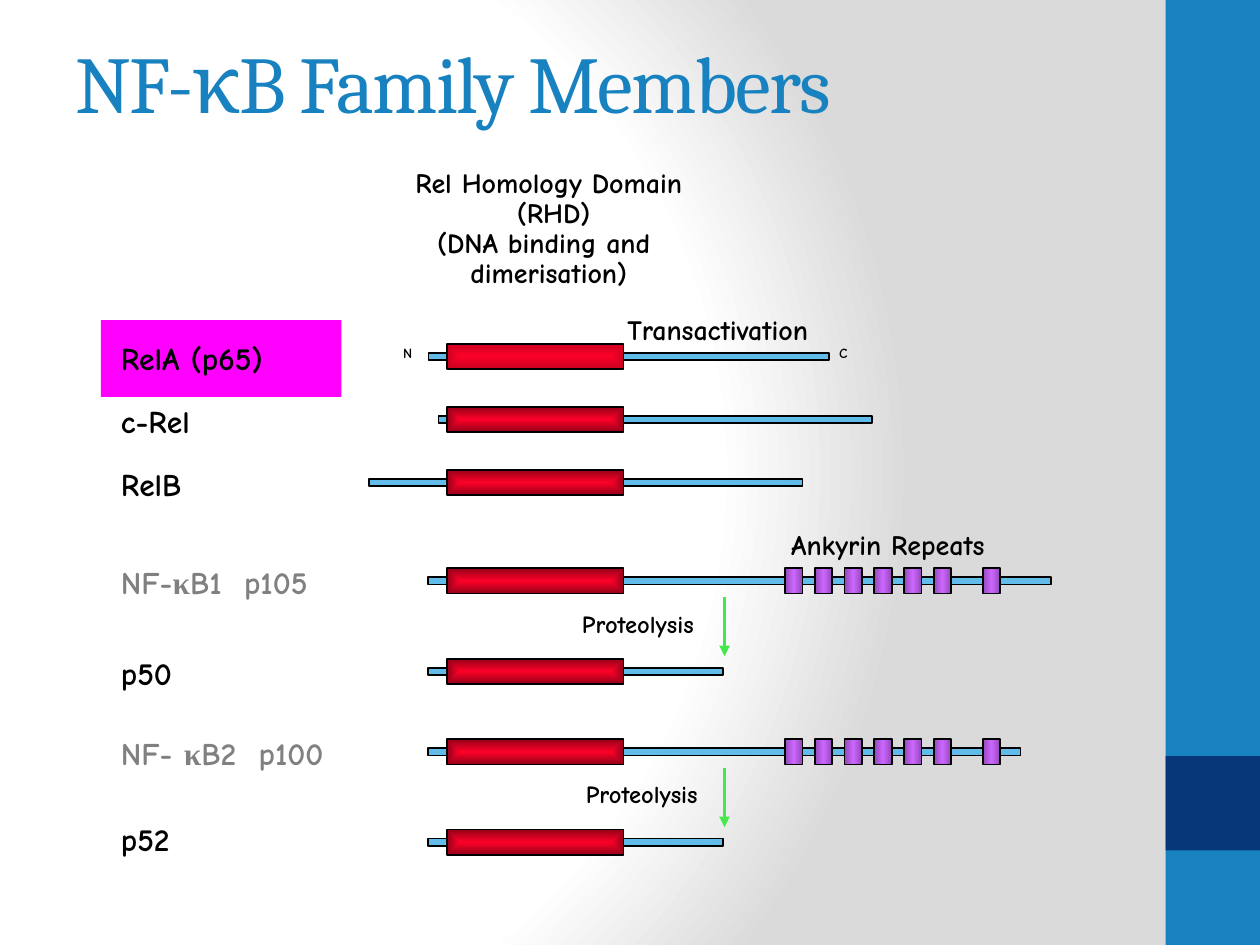
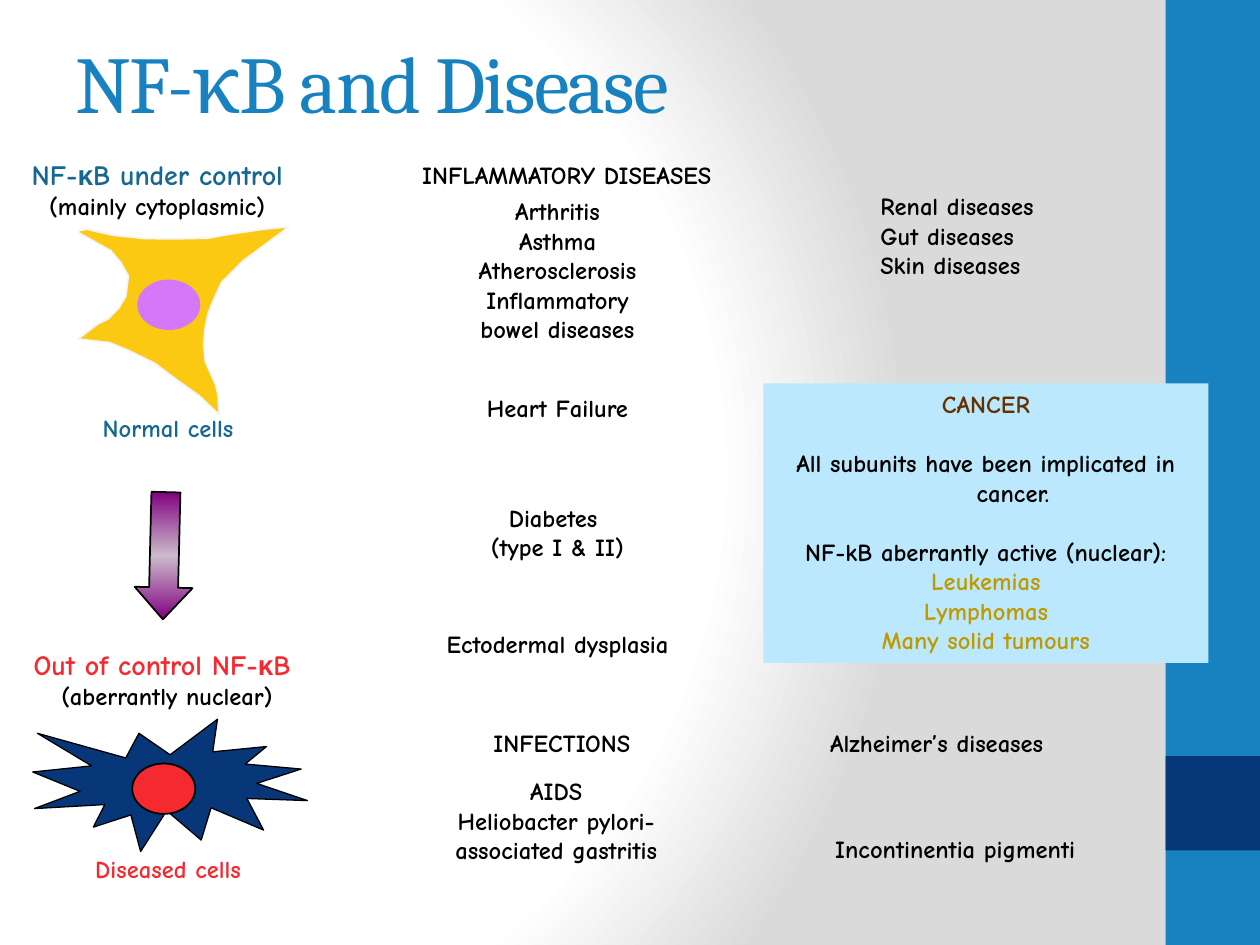
from copy import deepcopy

from pptx import Presentation
from pptx.dml.color import RGBColor
from pptx.enum.shapes import MSO_CONNECTOR, MSO_SHAPE
from pptx.enum.text import MSO_ANCHOR, MSO_AUTO_SIZE, PP_ALIGN
from pptx.oxml import parse_xml
from pptx.oxml.ns import nsdecls, qn
from pptx.oxml.xmlchemy import OxmlElement
from pptx.util import Pt

RECT, OVAL = MSO_SHAPE.RECTANGLE, MSO_SHAPE.OVAL
BURST, ARROW = MSO_SHAPE.EXPLOSION1, MSO_SHAPE.RIGHT_ARROW
STRAIGHT = MSO_CONNECTOR.STRAIGHT
LEFT, CENTER = PP_ALIGN.LEFT, PP_ALIGN.CENTER
TOP, MIDDLE = MSO_ANCHOR.TOP, MSO_ANCHOR.MIDDLE
GROW, FIXED = MSO_AUTO_SIZE.SHAPE_TO_FIT_TEXT, MSO_AUTO_SIZE.NONE

BLACK = RGBColor(0x00, 0x00, 0x00)
GREY = RGBColor(0x80, 0x80, 0x80)
BLUE = RGBColor(0x17, 0x82, 0xBF)
NAVY = RGBColor(0x07, 0x37, 0x79)
TEAL = RGBColor(0x14, 0x68, 0x91)
SKY = RGBColor(0x62, 0xBC, 0xE9)
PALE_BLUE = RGBColor(0xBC, 0xE8, 0xFD)
MAGENTA = RGBColor(0xFF, 0x00, 0xFF)
LILAC = RGBColor(0xD6, 0x77, 0xFA)
GREEN = RGBColor(0x43, 0xE9, 0x4B)
RED = RGBColor(0xF4, 0x2A, 0x30)
YELLOW = RGBColor(0xFB, 0xC9, 0x12)
OFF_WHITE = RGBColor(0xF4, 0xF4, 0xF4)
BROWN = RGBColor(0x64, 0x32, 0x01)
GOLD = RGBColor(0xBF, 0x99, 0x00)

TITLE_FONT, BODY_FONT = "Cambria", "Comic Neue"

CENTRED = '<a:path path="shape"><a:fillToRect l="50000" t="50000" r="50000" b="50000"/></a:path>'
GRADIENTS = {}
for name, stops, direction in [
    ("page", [(0, "FFFFFF"), (75, "FFFFFF"), (100, "DADADA")],
     '<a:path path="circle"><a:fillToRect l="20000" t="50000" r="100000" b="50000"/></a:path>'),
    ("bright domain", [(0, "FC0128"), (100, "CA0120")], CENTRED),
    ("domain", [(0, "FC0128"), (100, "950118")], CENTRED),
    ("repeat", [(0, "9249B6"), (50, "CC66FF"), (100, "9249B6")], '<a:lin ang="0" scaled="0"/>'),
    ("arrow", [(0, "800080"), (50, "CBBBCB"), (100, "800080")], '<a:lin ang="5400000" scaled="0"/>'),
]:
    gs = "".join(f'<a:gs pos="{pos * 1000}"><a:srgbClr val="{rgb}"/></a:gs>' for pos, rgb in stops)
    GRADIENTS[name] = parse_xml(f'<a:gradFill {nsdecls("a")} rotWithShape="0">'
                                f'<a:gsLst>{gs}</a:gsLst>{direction}</a:gradFill>')


def style(sp, fill, line=None, width=1):
    """Fill a shape with a colour or a named gradient, outline it and drop its shadow."""
    sp.shadow.inherit = False
    if isinstance(fill, str):
        sp.fill.background()
        spPr = sp._element.spPr
        spPr.replace(spPr.find(qn("a:noFill")), deepcopy(GRADIENTS[fill]))
    else:
        sp.fill.solid()
        sp.fill.fore_color.rgb = fill
    if line is None:
        sp.line.fill.background()
    else:
        sp.line.color.rgb = line
        sp.line.width = Pt(width)
    return sp


def add_text(sp, text, size=14, color=BLACK, bold=True, font=BODY_FONT, kappa="Arial",
             align=CENTER, wrap=False, fit=GROW, anchor=TOP, inset=(7.2, 3.6),
             spacing=None, before=0):
    """Append one paragraph per line; the letter κ may have its own font."""
    tf = sp.text_frame
    tf.word_wrap, tf.auto_size, tf.vertical_anchor = wrap, fit, anchor
    tf.margin_left = tf.margin_right = Pt(inset[0])
    tf.margin_top = tf.margin_bottom = Pt(inset[1])
    for line in text.split("\n"):
        p = tf.add_paragraph() if tf.text else tf.paragraphs[0]
        p.alignment, p.line_spacing, p.space_before = align, spacing, Pt(before)
        for part, face in zip(line.partition("κ"), (font, kappa, font)):
            if part:
                r = p.add_run()
                r.text = part
                r.font.name, r.font.size, r.font.bold = face, Pt(size), bold
                r.font.color.rgb = color


prs = Presentation()
prs.slide_width, prs.slide_height = Pt(720), Pt(540)

# Shared background, side bands and title
master = prs.slide_master
master.background.fill.background()
bgPr = master.element.find(".//" + qn("p:bgPr"))
bgPr.replace(bgPr.find(qn("a:noFill")), deepcopy(GRADIENTS["page"]))

slides = []
for title in ("NF-κB Family Members", "NF-κB and Disease"):
    s = prs.slides.add_slide(prs.slide_layouts[5])
    for top, height, color in ((0, 540, BLUE), (432, 54, NAVY)):
        style(s.shapes.add_shape(RECT, Pt(666), Pt(top), Pt(54), Pt(height)), color)
    sp = s.shapes.title
    sp.left, sp.top, sp.width, sp.height = Pt(36), Pt(1.5), Pt(600), Pt(90)
    add_text(sp, title, size=46, color=BLUE, bold=False, font=TITLE_FONT, kappa=TITLE_FONT,
             align=LEFT, wrap=True, fit=FIXED, anchor=MIDDLE)
    for r in sp.text_frame.paragraphs[0].runs:
        r._r.get_or_add_rPr().set("spc", "-100")
    slides.append(s)
family, disease = slides

# Slide 1: one row per protein, all domains aligned
s = family
style(s.shapes.add_shape(RECT, Pt(57.6), Pt(182.9), Pt(137.5), Pt(44)), MAGENTA)

DOMAIN_LEFT, DOMAIN_WIDTH, DOMAIN_HEIGHT, CHAIN_HEIGHT = 255.6, 100.8, 14.4, 4.2
REPEAT_LEFTS = [448.6 + 17 * i for i in range(6)] + [561.6]
proteins = [  # name, label top, row centre, chain left, chain width, has ankyrin repeats
    ("RelA (p65)", 193.7, 203.7, 244.8, 229, False),
    ("c-Rel", 229.7, 239.7, 250.6, 247.7, False),
    ("RelB", 265.7, 275.7, 211, 247.7, False),
    ("NF-κB1  p105", 321.8, 332, 244.8, 355.7, True),
    ("p50", 373.7, 383.7, 244.8, 168.5, False),
    ("NF- κB2  p100", 419.8, 429.7, 244.8, 338.4, True),
    ("p52", 468.7, 481.3, 244.8, 168.5, False),
]
labels = [  # text, left, top, width, height, size, colour, alignment
    ("Rel Homology Domain\n (RHD)\n(DNA binding and \ndimerisation)",
     162.7, 94.3, 301.7, 75, 16, BLACK, CENTER),
    ("Transactivation", 353.5, 178.6, 129.6, 22.3, 16, BLACK, LEFT),
    ("N", 225.4, 195.8, 23, 18.7, 8, BLACK, LEFT),
    ("C", 474.5, 195.8, 20.9, 18.7, 8, BLACK, LEFT),
    ("Ankyrin Repeats", 447.1, 301.7, 137.5, 22.3, 16, BLACK, LEFT),
    ("Proteolysis", 327.6, 347.8, 83.5, 20.9, 14, BLACK, LEFT),
    ("Proteolysis", 329.8, 445, 83.5, 20.9, 14, BLACK, LEFT),
]
label_widths = [103.7, 57.6, 49, 139, 42.5, 147.6, 42.5]

for (name, label_top, mid, left, width, has_repeats), label_width in zip(proteins, label_widths):
    labels.append((name, 64.1, label_top, label_width, 25.2, 18,
                   GREY if has_repeats else BLACK, LEFT))
    style(s.shapes.add_shape(RECT, Pt(left), Pt(mid - CHAIN_HEIGHT / 2), Pt(width),
                             Pt(CHAIN_HEIGHT)), SKY, BLACK)
    blocks = [(DOMAIN_LEFT, DOMAIN_WIDTH, "bright domain" if name.startswith("RelA") else "domain")]
    if has_repeats:
        blocks += [(x, 10, "repeat") for x in REPEAT_LEFTS]
        cn = s.shapes.add_connector(STRAIGHT, Pt(414), Pt(mid + 9.3), Pt(414), Pt(mid + 43))
        cn.line.color.rgb, cn.line.width = GREEN, Pt(2)
        tail = OxmlElement("a:tailEnd")
        tail.set("type", "triangle")
        cn.line._get_or_add_ln().append(tail)
        cn._element.spPr.append(OxmlElement("a:effectLst"))
    for x, block_width, fill in blocks:
        style(s.shapes.add_shape(RECT, Pt(x), Pt(mid - DOMAIN_HEIGHT / 2), Pt(block_width),
                                 Pt(DOMAIN_HEIGHT)), fill, BLACK)

for text, left, top, width, height, size, color, align in labels:
    sp = s.shapes.add_textbox(Pt(left), Pt(top), Pt(width), Pt(height))
    add_text(sp, text, size=size, color=color, align=align, kappa="Times New Roman",
             wrap=align == CENTER, inset=(5, 2.2), spacing=0.9)

# Slide 2: cells on the left, diseases on the right
s = disease
outline = [
    (45, 133), (63.4, 143.3), (69, 150), (73.4, 157.7), (72, 169.2), (68, 176), (61.9, 182.2),
    (56.2, 185), (44.6, 193.7), (62.6, 195.8), (73.4, 200.2), (88.6, 207.7), (101.5, 217.4),
    (113.8, 226.1), (125.3, 236.9), (124.6, 225.4), (123.1, 219.6), (117.4, 206.6),
    (116.4, 197), (117.2, 187.8), (119, 179), (122.4, 170.6), (126.7, 161.3), (139, 149),
    (155.5, 136.8), (161.3, 132.5), (164.9, 129.6), (150.5, 131), (131, 133.9), (118.8, 136.1),
    (100, 136.5), (82.9, 136.3), (65, 134.5), (49.7, 131), (45.4, 131.8),
]
points = [(Pt(x), Pt(y)) for x, y in outline]
builder = s.shapes.build_freeform(*points[0])
builder.add_line_segments(points[1:], close=True)
style(builder.convert_to_shape(), YELLOW, OFF_WHITE)
style(s.shapes.add_shape(OVAL, Pt(78.5), Pt(159.8), Pt(36), Pt(28.8)), LILAC)
style(s.shapes.add_shape(BURST, Pt(18.7), Pt(411), Pt(157), Pt(75.6)), NAVY, BLACK, 0.75)
style(s.shapes.add_shape(OVAL, Pt(75.6), Pt(436.3), Pt(36), Pt(28.8)), RED, BLACK)
arrow = style(s.shapes.add_shape(ARROW, Pt(57.6), Pt(301), Pt(72.7), Pt(33.1)), "arrow", BLACK)
arrow.rotation = 91.4
arrow.adjustments[0], arrow.adjustments[1] = 0.5, 0.55

for heading, note, left, top, width, color in [
    ("NF-κB under control", "(mainly cytoplasmic)", 1.4, 86.4, 177.1, TEAL),
    ("Out of control NF-κB ", "(aberrantly nuclear)", -1.4, 366.5, 193.7, RED),
]:
    sp = s.shapes.add_textbox(Pt(left), Pt(top), Pt(width), Pt(43.9))
    add_text(sp, heading, size=16, color=color)
    add_text(sp, note)

for text, left, top, width, height, color, align, wrap in [
    ("Normal cells", 46.8, 232.6, 98.6, 24.5, TEAL, CENTER, False),
    ("Diseased cells", 40.3, 484.6, 111.6, 24.5, RED, CENTER, False),
    ("INFLAMMATORY DISEASES", 216, 87.8, 216, 24.5, BLACK, CENTER, False),
    ("Arthritis\nAsthma\nAtherosclerosis\nInflammatory bowel diseases",
     252, 108.7, 133.2, 108.7, BLACK, CENTER, True),
    ("Heart Failure", 255.6, 221, 126, 24.5, BLACK, CENTER, True),
    ("Diabetes \n(type I & II)", 231.8, 283.7, 173.5, 57.6, BLACK, CENTER, True),
    ("Ectodermal dysplasia", 239.8, 355.7, 157.7, 24.5, BLACK, CENTER, False),
    ("INFECTIONS", 261.1, 412.6, 120, 24.5, BLACK, CENTER, False),
    ("AIDS\nHeliobacter pylori-associated gastritis", 234, 440, 167.8, 60, BLACK, CENTER, True),
    ("Renal diseases\nGut diseases\nSkin diseases", 496, 105.8, 124.6, 57.6, BLACK, LEFT, True),
    ("Alzheimer’s diseases", 467.3, 412.6, 182.2, 24.5, BLACK, LEFT, True),
    ("Incontinentia pigmenti", 470.2, 473, 175.7, 24.5, BLACK, LEFT, True),
]:
    sp = s.shapes.add_textbox(Pt(left), Pt(top), Pt(width), Pt(height))
    add_text(sp, text, color=color, align=align, wrap=wrap)

cancer = style(s.shapes.add_shape(RECT, Pt(436.3), Pt(219), Pt(254.2), Pt(159.8)), PALE_BLUE)
for text, color, before in [
    ("CANCER", BROWN, 0),
    ("All subunits have been implicated in cancer. ", BLACK, 16.9),
    ("NF-kB aberrantly active (nuclear):", BLACK, 16.9),
    ("Leukemias\nLymphomas\nMany solid tumours", GOLD, 0),
]:
    add_text(cancer, text, color=color, wrap=True, before=before)
for p in cancer.text_frame.paragraphs:
    pPr = p._p.get_or_add_pPr()
    pPr.set("marL", str(Pt(36)))
    pPr.set("indent", str(-Pt(36)))

prs.save("out.pptx")
